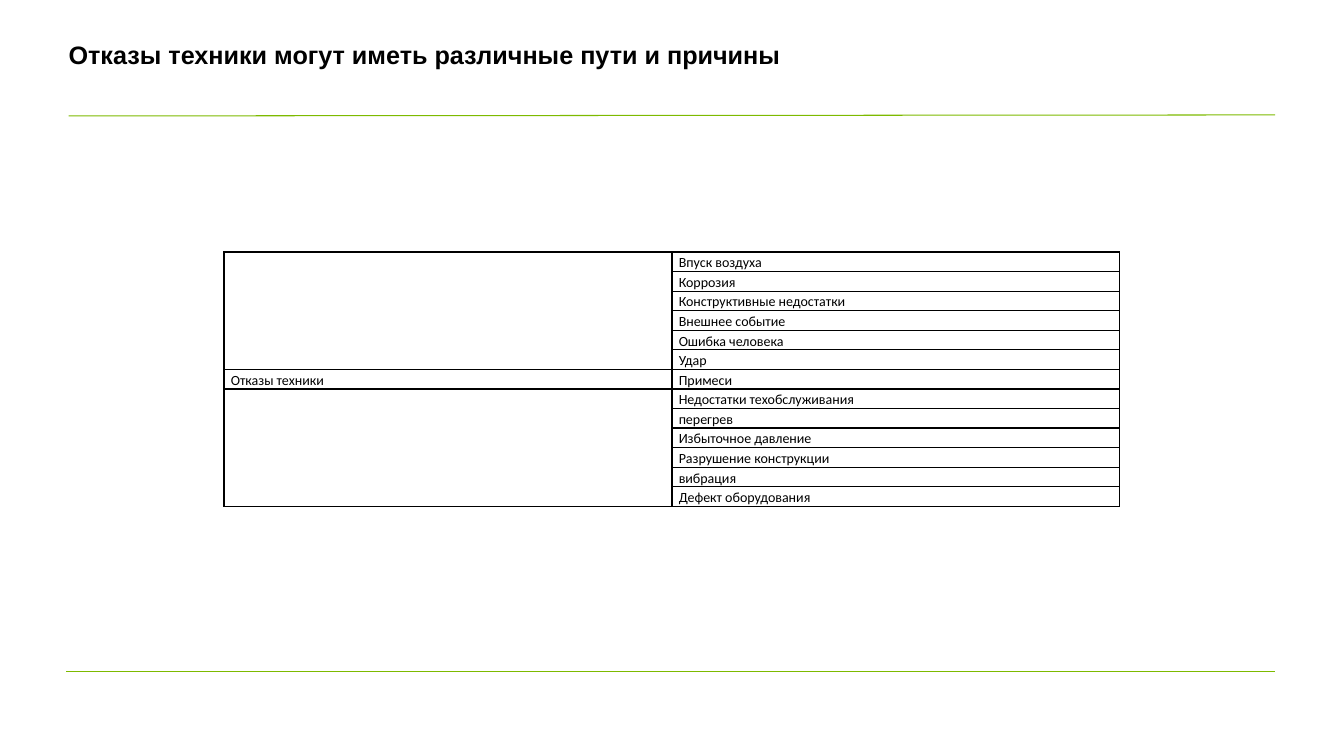
from dataclasses import dataclass

from lxml import etree
from pptx import Presentation
from pptx.dml.color import RGBColor
from pptx.enum.shapes import MSO_CONNECTOR
from pptx.enum.text import MSO_ANCHOR, MSO_AUTO_SIZE, PP_ALIGN
from pptx.oxml.ns import qn
from pptx.slide import Slide
from pptx.table import _Cell
from pptx.text.text import TextFrame
from pptx.util import Pt

STRAIGHT = MSO_CONNECTOR.STRAIGHT
TOP = MSO_ANCHOR.TOP
LEFT = PP_ALIGN.LEFT
NO_AUTOFIT = MSO_AUTO_SIZE.NONE
TITLE_ONLY_LAYOUT = 5

COLORS = {"text": "000000", "rule": "7DBA00", "border": "000000"}

TITLE = "Отказы техники могут иметь различные пути и причины"
SUBJECT = "Отказы техники"
CAUSES = [
    "Впуск воздуха",
    "Коррозия",
    "Конструктивные недостатки",
    "Внешнее событие",
    "Ошибка человека",
    "Удар",
    "Примеси",
    "Недостатки техобслуживания",
    "перегрев",
    "Избыточное давление",
    "Разрушение конструкции",
    "вибрация",
    "Дефект оборудования",
]
COLUMN_WIDTH = 320
ROW_HEIGHT = 13.8
CELL_INSET = 4.9


@dataclass(frozen=True)
class Rule:
    x1: float
    y1: float
    x2: float
    y2: float


RULES = [Rule(47.5, 479.5, 910.8, 479.5), Rule(49, 82.8, 910.8, 82.1)]


def write_text(frame: TextFrame, text: str, *, size: float, font: str,
               spacing: float, bold: bool = False, inset: float = 0) -> None:
    frame.margin_left = frame.margin_right = Pt(inset)
    frame.margin_top = frame.margin_bottom = 0
    para = frame.paragraphs[0]
    para.alignment = LEFT
    para.line_spacing = spacing
    para.space_before = para.space_after = Pt(0)
    if not text:
        etree.SubElement(para._p, qn("a:endParaRPr"), sz=str(size * 100))
        return
    span = para.add_run()
    span.text = text
    span.font.name = font
    span.font.size = Pt(size)
    span.font.bold = bold
    span.font.color.rgb = RGBColor.from_string(COLORS["text"])


def add_title(page: Slide) -> None:
    box = page.shapes.title
    box.left, box.top, box.width, box.height = Pt(49), Pt(26), Pt(733), Pt(51)
    frame = box.text_frame
    frame.word_wrap = True
    frame.auto_size = NO_AUTOFIT
    frame.vertical_anchor = TOP
    write_text(frame, TITLE, size=18, font="Arial", spacing=1.1, bold=True)


def add_rule(page: Slide, rule: Rule) -> None:
    line = page.shapes.add_connector(
        STRAIGHT, Pt(rule.x1), Pt(rule.y1), Pt(rule.x2), Pt(rule.y2))
    line.line.color.rgb = RGBColor.from_string(COLORS["rule"])
    line.line.width = Pt(0.75)
    etree.SubElement(line._element.spPr, qn("a:effectLst"))


def format_cell(cell: _Cell, text: str) -> None:
    write_text(cell.text_frame, text, size=10, font="Calibri", spacing=1.15)
    cell.margin_left = cell.margin_right = Pt(CELL_INSET)
    cell.margin_top = cell.margin_bottom = 0
    cell.vertical_anchor = TOP
    properties = cell._tc.get_or_add_tcPr()
    for side in ("a:lnL", "a:lnR", "a:lnT", "a:lnB"):
        border = etree.SubElement(properties, qn(side), w=str(Pt(1)))
        fill = etree.SubElement(border, qn("a:solidFill"))
        etree.SubElement(fill, qn("a:srgbClr"), val=COLORS["border"])
    cell.fill.background()


def add_causes_table(page: Slide) -> None:
    count = len(CAUSES)
    middle = count // 2
    table = page.shapes.add_table(
        count, 2, Pt(160), Pt(180),
        Pt(2 * COLUMN_WIDTH), Pt(count * ROW_HEIGHT)).table
    table.first_row = table.horz_banding = False
    for index, cause in enumerate(CAUSES):
        table.rows[index].height = Pt(ROW_HEIGHT)
        format_cell(table.cell(index, 0), SUBJECT if index == middle else "")
        format_cell(table.cell(index, 1), cause)
    for first, last in ((0, middle - 1), (middle + 1, count - 1)):
        table.cell(first, 0).merge(table.cell(last, 0))


def main() -> None:
    deck = Presentation()
    deck.slide_width, deck.slide_height = Pt(960), Pt(540)
    page = deck.slides.add_slide(deck.slide_layouts[TITLE_ONLY_LAYOUT])
    add_title(page)
    for rule in RULES:
        add_rule(page, rule)
    add_causes_table(page)
    deck.save("out.pptx")


if __name__ == "__main__":
    main()
